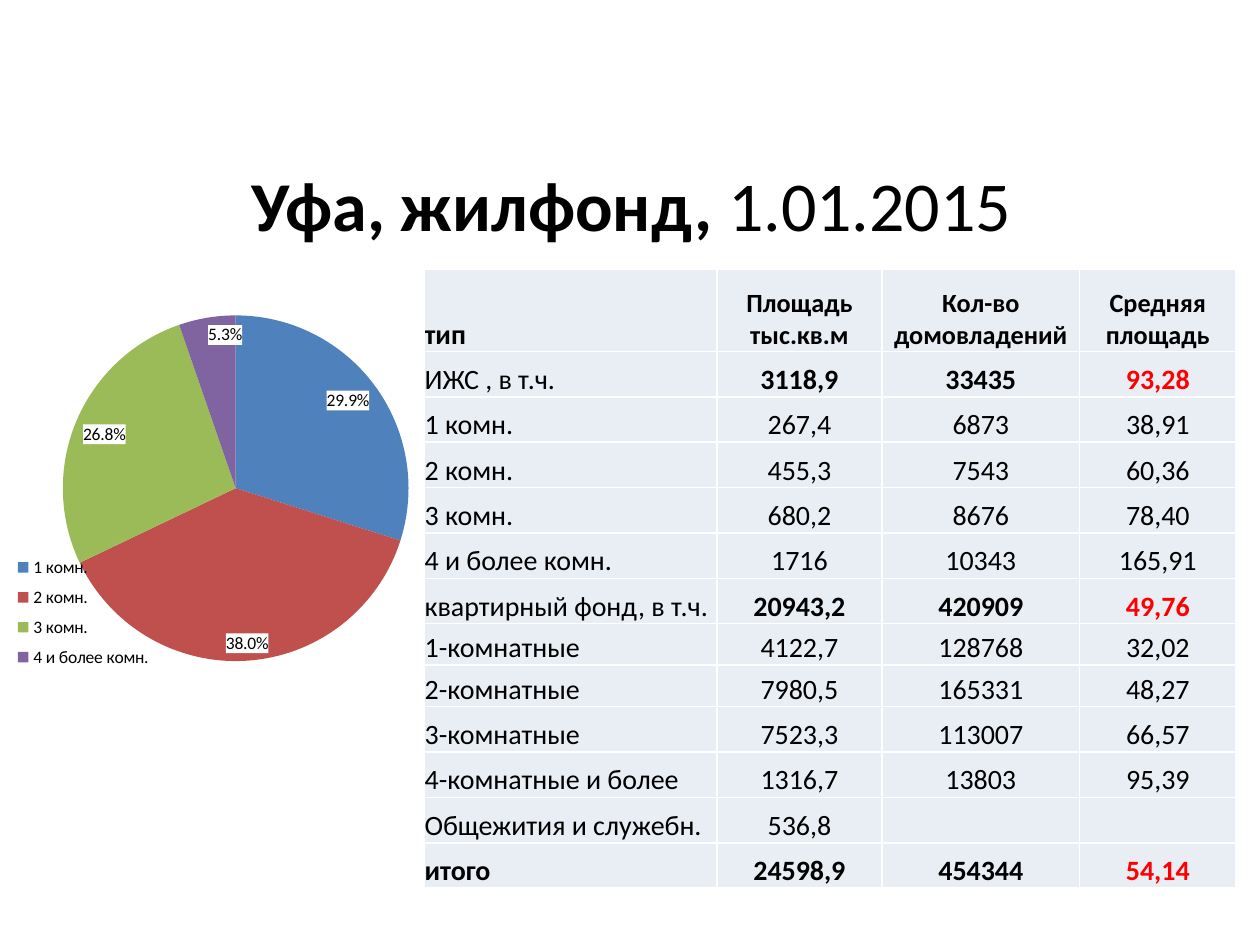
from lxml import etree
from pptx import Presentation
from pptx.chart.data import CategoryChartData
from pptx.dml.color import RGBColor
from pptx.enum.chart import XL_CHART_TYPE, XL_LABEL_POSITION, XL_LEGEND_POSITION
from pptx.enum.text import MSO_ANCHOR, PP_ALIGN
from pptx.oxml import parse_xml
from pptx.oxml.ns import nsdecls, qn
from pptx.util import Inches, Pt

COLORS = {"text": "000000", "accent": "FF0000", "cell": "E9EDF4", "line": "FFFFFF"}
PIE_COLORS = ["4F81BD", "C0504D", "9BBB59", "8064A2"]
FONT = "Calibri"

HEADER = ["тип", "Площадь тыс.кв.м", "Кол-во домовладений", "Средняя площадь"]
ROWS = [
    ["ИЖС , в т.ч.", "3118,9", "33435", "93,28"],
    ["1 комн.", "267,4", "6873", "38,91"],
    ["2 комн.", "455,3", "7543", "60,36"],
    ["3 комн.", "680,2", "8676", "78,40"],
    ["4 и более комн.", "1716", "10343", "165,91"],
    ["квартирный фонд, в т.ч.", "20943,2", "420909", "49,76"],
    ["1-комнатные", "4122,7", "128768", "32,02"],
    ["2-комнатные", "7980,5", "165331", "48,27"],
    ["3-комнатные", "7523,3", "113007", "66,57"],
    ["4-комнатные и более", "1316,7", "13803", "95,39"],
    ["Общежития и служебн.", "536,8", "", ""],
    ["итого", "24598,9", "454344", "54,14"],
]
SUMMARY_ROWS = {1, 6, 12}
TOTAL_ROW = 12
COL_WIDTHS = [2.32, 1.31, 1.57, 1.24]
ROW_HEIGHTS = [0.65] + [0.36] * 6 + [0.33] * 2 + [0.36] * 4
SHARES = {"1 комн.": 0.299, "2 комн.": 0.38, "3 комн.": 0.268, "4 и более комн.": 0.053}


def rgb(name):
    return RGBColor.from_string(COLORS[name])


def add_text(p, text, size=16, bold=False, color="text", align=PP_ALIGN.LEFT):
    p.alignment = align
    r = p.add_run()
    r.text = text
    r.font.name = FONT
    r.font.size = Pt(size)
    r.font.bold = bold
    r.font.color.rgb = rgb(color)


def manual_layout(x, y, w, h, inner=False):
    target = '<c:layoutTarget val="inner"/>' if inner else ""
    return parse_xml(
        f'<c:layout {nsdecls("c")}><c:manualLayout>{target}'
        '<c:xMode val="edge"/><c:yMode val="edge"/>'
        f'<c:x val="{x}"/><c:y val="{y}"/><c:w val="{w}"/><c:h val="{h}"/>'
        "</c:manualLayout></c:layout>")


def chart_fill(fill):
    return parse_xml(f'<c:spPr {nsdecls("c", "a")}>{fill}<a:ln><a:noFill/></a:ln></c:spPr>')


class SlideBuilder:
    def __init__(self, prs):
        self.s = prs.slides.add_slide(prs.slide_layouts[5])

    def title(self, parts, x, y, w, h):
        sp = self.s.shapes.title
        sp.left, sp.top, sp.width, sp.height = map(Inches, (x, y, w, h))
        tf = sp.text_frame
        tf.vertical_anchor = MSO_ANCHOR.MIDDLE
        for text, bold in parts:
            add_text(tf.paragraphs[0], text, size=40, bold=bold, align=PP_ALIGN.CENTER)

    def border(self, cell):
        tc_pr = cell._tc.get_or_add_tcPr()
        for side in ("lnL", "lnR", "lnT", "lnB"):
            ln = etree.SubElement(tc_pr, qn(f"a:{side}"), w=str(Pt(1)))
            fill = etree.SubElement(ln, qn("a:solidFill"))
            etree.SubElement(fill, qn("a:srgbClr"), val=COLORS["line"])

    def cell(self, cell, text, **fmt):
        cell.margin_left = cell.margin_right = cell.margin_top = cell.margin_bottom = 0
        cell.vertical_anchor = MSO_ANCHOR.BOTTOM
        self.border(cell)
        cell.fill.solid()
        cell.fill.fore_color.rgb = rgb("cell")
        if text:
            add_text(cell.text_frame.paragraphs[0], text, **fmt)

    def table(self, rows, x, y):
        table = self.s.shapes.add_table(
            len(rows), len(COL_WIDTHS), Inches(x), Inches(y),
            Inches(sum(COL_WIDTHS)), Inches(sum(ROW_HEIGHTS))).table
        for col, width in zip(table.columns, COL_WIDTHS):
            col.width = Inches(width)
        for row, height in zip(table.rows, ROW_HEIGHTS):
            row.height = Inches(height)
        for i, values in enumerate(rows):
            for j, text in enumerate(values):
                summary = i in SUMMARY_ROWS
                self.cell(
                    table.cell(i, j), text,
                    size=15 if i == 0 and j else 16,
                    bold=i in (0, TOTAL_ROW) or (summary and j > 0),
                    color="accent" if summary and j == 3 else "text",
                    align=PP_ALIGN.CENTER if j else PP_ALIGN.LEFT)

    def pie(self, shares, x, y, w, h):
        data = CategoryChartData(number_format="0.0%")
        data.categories = list(shares)
        data.add_series("Series 1", list(shares.values()))
        chart = self.s.shapes.add_chart(
            XL_CHART_TYPE.PIE, Inches(x), Inches(y), Inches(w), Inches(h), data).chart
        chart.has_title = False
        chart.font.name = FONT
        chart.font.size = Pt(10)
        chart.font.color.rgb = rgb("text")
        chart._chartSpace.chart.addnext(chart_fill("<a:noFill/>"))

        plot = chart.plots[0]
        plot.vary_by_categories = True
        for i, color in enumerate(PIE_COLORS):
            fill = plot.series[0].points[i].format.fill
            fill.solid()
            fill.fore_color.rgb = RGBColor.from_string(color)

        plot.has_data_labels = True
        labels = plot.data_labels
        labels.show_value = True
        labels.show_percentage = False
        labels.number_format = "0.0%"
        labels.number_format_is_linked = False
        labels.position = XL_LABEL_POSITION.INSIDE_END
        white = f'<a:solidFill><a:srgbClr val="{COLORS["line"]}"/></a:solidFill>'
        labels._element.find(qn("c:numFmt")).addnext(chart_fill(white))

        chart.has_legend = True
        legend = chart.legend
        legend.position = XL_LEGEND_POSITION.RIGHT
        legend.include_in_layout = False
        self.place(legend._element, manual_layout(0.05, 0.67, 0.22, 0.32), "c:legendPos")
        area = chart._chartSpace.chart.plotArea
        self.place(area, manual_layout(0.13, 0.1, 0.51, 0.85, inner=True))

    def place(self, element, layout, after=None):
        old = element.find(qn("c:layout"))
        if old is not None:
            element.remove(old)
        if after:
            element.find(qn(after)).addnext(layout)
        else:
            element.insert(0, layout)


def main():
    prs = Presentation()
    prs.slide_width, prs.slide_height = Inches(10), Inches(7.5)
    slide = SlideBuilder(prs)
    slide.title([("Уфа, жилфонд, ", True), ("1.01.2015", False)], 0.51, 0.99, 9, 1.25)
    slide.table([HEADER] + ROWS, 3.37, 2.14)
    slide.pie(SHARES, -0.2, 2.18, 5.38, 3.23)
    prs.save("out.pptx")


if __name__ == "__main__":
    main()
